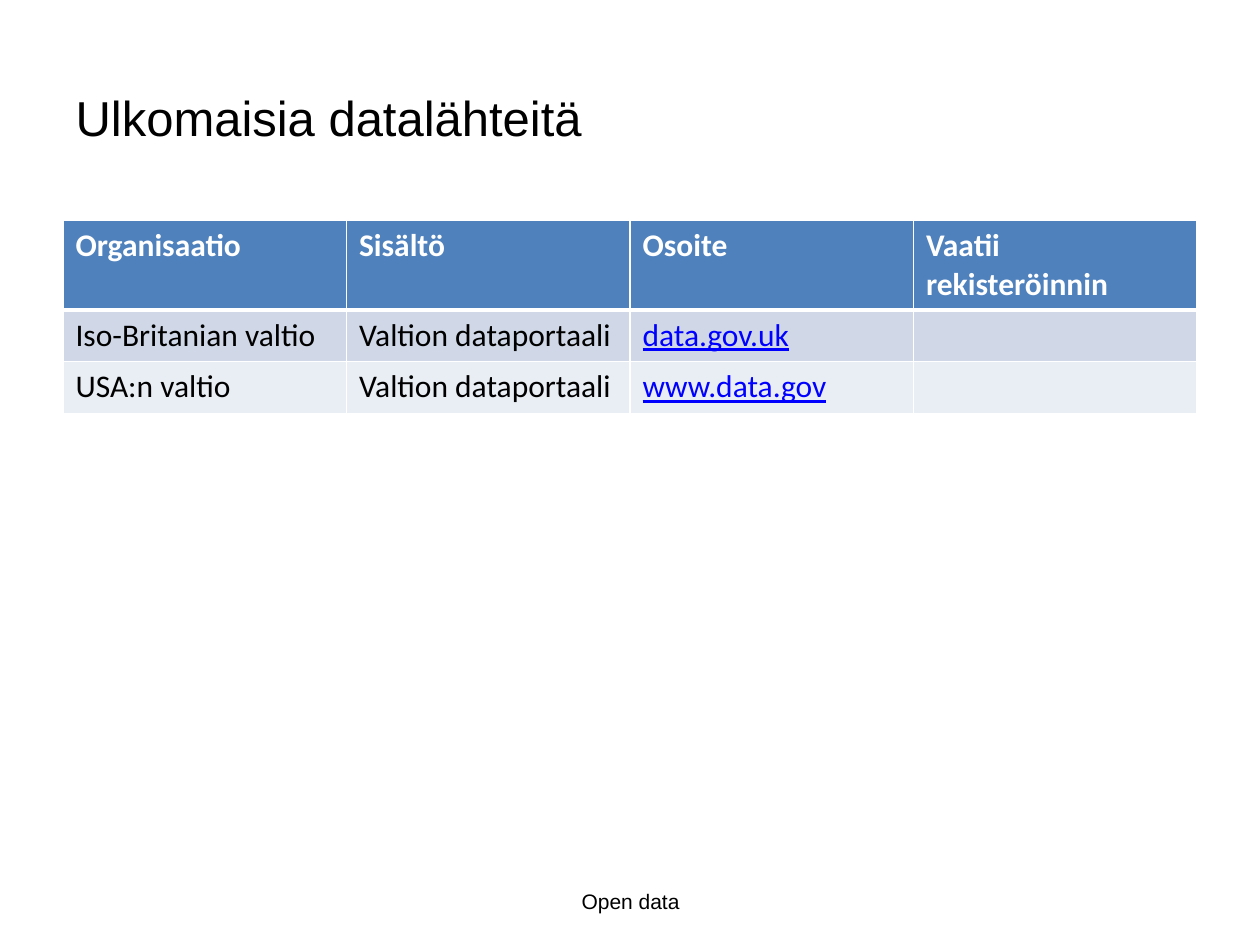
from lxml import etree
from pptx import Presentation
from pptx.dml.color import RGBColor
from pptx.enum import text
from pptx.oxml import ns
from pptx.util import Inches, Pt

BLACK = RGBColor(0x00, 0x00, 0x00)
WHITE = RGBColor(0xFF, 0xFF, 0xFF)
ADDRESS_BLUE = RGBColor(0x00, 0x00, 0xFF)
HEADER_BLUE = RGBColor(0x4F, 0x81, 0xBD)
BANDS = (RGBColor(0xE9, 0xED, 0xF4), RGBColor(0xD0, 0xD8, 0xE8))

SOURCES = [
    ("Organisaatio", "Sisältö", "Osoite", "Vaatii rekisteröinnin"),
    ("Iso-Britanian valtio", "Valtion dataportaali", "data.gov.uk", ""),
    ("USA:n valtio", "Valtion dataportaali", "www.data.gov", ""),
]
ADDRESS_COLUMN = SOURCES[0].index("Osoite")


def place(shape, box):
    """Move and size a shape to a box given in inches."""
    shape.left, shape.top, shape.width, shape.height = map(Inches, box)


def write(frame, words, size, font_name, color, align=text.PP_ALIGN.LEFT):
    """Set one paragraph of text and return its font."""
    frame.text = words
    paragraph = frame.paragraphs[0]
    paragraph.alignment = align
    font = paragraph.runs[0].font if paragraph.runs else paragraph.font
    font.size, font.name = Pt(size), font_name
    font.color.rgb = color
    return font


def add_title(slide, box):
    """Place the slide title."""
    title = slide.shapes.title
    place(title, box)
    title.text_frame.vertical_anchor = text.MSO_ANCHOR.MIDDLE
    write(title.text_frame, "Ulkomaisia datalähteitä", 28, "Arial", BLACK)


def set_borders(cell, bottom_width, top_width):
    """Give a cell white borders."""
    properties = cell._tc.get_or_add_tcPr()
    widths = {"lnL": 1, "lnR": 1, "lnT": top_width, "lnB": bottom_width}
    for side, width in widths.items():
        line = etree.SubElement(properties, ns.qn(f"a:{side}"), w=str(Pt(width)))
        fill = etree.SubElement(line, ns.qn("a:solidFill"))
        etree.SubElement(fill, ns.qn("a:srgbClr"), val=str(WHITE))


def add_sources(slide, box):
    """Add the table of data sources."""
    frame = slide.shapes.add_table(len(SOURCES), len(SOURCES[0]), *map(Inches, box))
    for row_index, source in enumerate(SOURCES):
        is_header = row_index == 0
        for column_index, words in enumerate(source):
            cell = frame.table.cell(row_index, column_index)
            set_borders(cell, 3 if is_header else 1, 3 if row_index == 1 else 1)
            cell.fill.solid()
            cell.fill.fore_color.rgb = HEADER_BLUE if is_header else BANDS[row_index % 2]
            is_address = column_index == ADDRESS_COLUMN and not is_header
            color = WHITE if is_header else ADDRESS_BLUE if is_address else BLACK
            font = write(cell.text_frame, words, 18, "Calibri", color)
            font.bold, font.underline = is_header, is_address


def add_footer(slide, box):
    """Add the centred footer."""
    footer = slide.shapes.add_textbox(*map(Inches, box)).text_frame
    footer.word_wrap = True
    footer.vertical_anchor = text.MSO_ANCHOR.MIDDLE
    write(footer, "Open data", 12, "Arial", BLACK, text.PP_ALIGN.CENTER)


def main():
    """Build and save the slide."""
    deck = Presentation()
    deck.slide_width, deck.slide_height = Inches(10), Inches(7.5)
    slide = deck.slides.add_slide(deck.slide_layouts[5])
    add_title(slide, (0.5, 0.3, 9, 1.25))
    add_sources(slide, (0.5, 1.75, 9, 1.23))
    add_footer(slide, (3.42, 6.95, 3.17, 0.4))
    deck.save("out.pptx")


if __name__ == "__main__":
    main()
